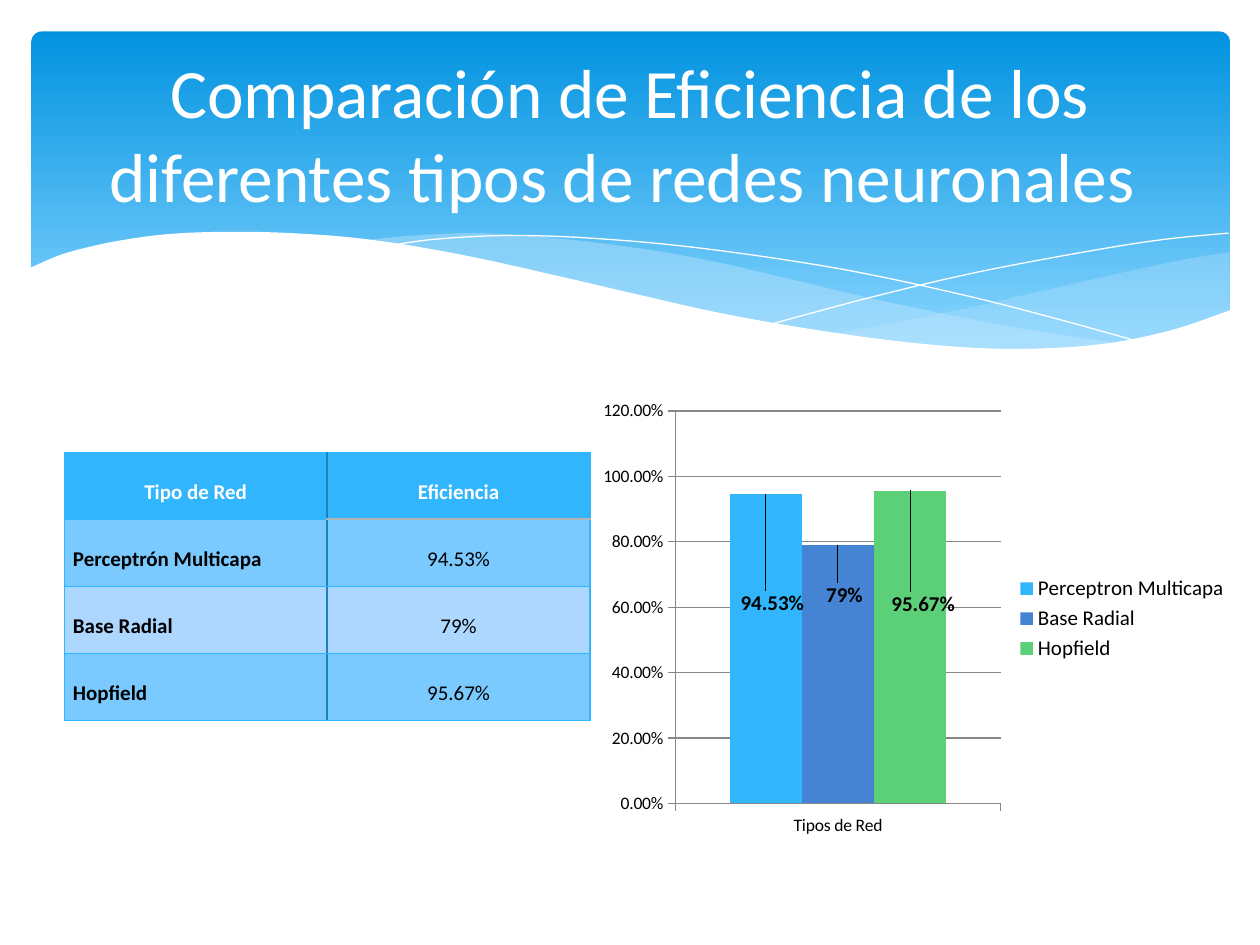
from lxml.etree import SubElement
from pptx import Presentation
from pptx.chart.data import CategoryChartData
from pptx.dml.color import RGBColor
from pptx.enum.chart import XL_CHART_TYPE, XL_LABEL_POSITION, XL_LEGEND_POSITION, XL_TICK_MARK
from pptx.enum.shapes import MSO_SHAPE
from pptx.enum.text import MSO_ANCHOR, MSO_AUTO_SIZE, PP_ALIGN
from pptx.oxml import parse_xml
from pptx.oxml.ns import nsdecls, qn
from pptx.util import Pt

COLORS = {
    "white": "FFFFFF", "black": "000000", "sky": "31B6FD", "blue": "4584D3",
    "green": "5BD078", "banner_top": "0293E0", "banner_bottom": "83D3FE",
    "ribbon": "C6E7FC", "divider": "1C83B9", "rule": "B4B4B4",
    "band_dark": "7BCAFF", "band_light": "ADD7FF", "axis": "878787",
}
FONT = "Calibri"

WAVE = [(703.4, 177.1), (669.6, 188.6), (630, 196.6), (582.5, 199.4), (535.7, 197.3),
        (481, 190.8), (416.9, 180), (362.2, 167.8), (321.8, 158.4), (262.8, 145.4),
        (210.2, 136.8), (165.6, 133.2), (127.4, 132.5), (95, 133.9), (68.4, 137.5),
        (48.2, 141.8), (33.1, 146.2), (16.6, 153.4)]
WAVE_BASE = [(16.6, 236.9), (703.4, 236.9)]
RIGHT_TOP = [(702.7, 144), (673.2, 149), (619.9, 160.6), (560.9, 174.2), (508.3, 185),
             (475.9, 190.8)]
RIGHT_BOTTOM = [(475.9, 190.8), (507.6, 195.1), (545, 198), (578.2, 200.2), (614.9, 198.7),
                (645.8, 194.4), (673.2, 188.6), (702.7, 177.8)]
LEFT_TOP = [(643, 196.6), (581, 187.2), (508.3, 172.8), (452.9, 159.8), (409.7, 149.8),
            (370.1, 142.6), (318.2, 136.1), (273.6, 133.2), (236.2, 134.6), (205.9, 137.5)]
LEFT_BOTTOM = [(205.9, 137.5), (246.2, 143.3), (290.9, 151.9), (353.5, 167), (407.5, 178.6),
               (468, 190.1), (519.8, 197.3), (565.2, 200.2), (603.4, 200.2), (643, 196.6)]
FALLING_LINE = [(222.5, 140.4), (247.7, 136.8), (288.7, 134.6), (337.7, 136.1),
                (400.3, 141.8), (478.8, 153.4), (547.2, 167.8), (598.3, 180.7), (653, 195.8)]
RISING_LINE = [(441.4, 185), (500.4, 169.2), (558.7, 155.5), (623.5, 143.3),
               (665.3, 136.8), (702, 133.2)]

TABLE_ROWS = [("Tipo de Red", "Eficiencia"), ("Perceptrón Multicapa", "94.53%"),
              ("Base Radial", "79%"), ("Hopfield", "95.67%")]
SERIES = [("Perceptron Multicapa", 0.9453, "sky", "0.00%", 0.01, 0.28),
          ("Base Radial", 0.79, "blue", "0%", 0.01, 0.15),
          ("Hopfield", 0.9567, "green", "0.00%", 0.02, 0.29)]


def rgb(name):
    return RGBColor.from_string(COLORS[name])


def smooth_curve(points, steps=6):
    if len(points) < 3:
        return points
    padded = [points[0], *points, points[-1]]
    curve = [points[0]]
    for before, start, end, after in zip(padded, padded[1:], padded[2:], padded[3:]):
        for step in range(1, steps + 1):
            t = step / steps
            curve.append(tuple(
                0.5 * (2 * b + (c - a) * t + (2 * a - 5 * b + 4 * c - d) * t ** 2
                       + (3 * b - a - 3 * c + d) * t ** 3)
                for a, b, c, d in zip(before, start, end, after)))
    return curve


def plot_layout(mode, **places):
    targets = '<c:layoutTarget val="inner"/>' if mode == "edge" else ""
    modes = '<c:xMode val="edge"/><c:yMode val="edge"/>' if mode == "edge" else ""
    values = "".join(f'<c:{key} val="{value}"/>' for key, value in places.items())
    return parse_xml(f'<c:layout {nsdecls("c")}><c:manualLayout>{targets}{modes}{values}'
                     '</c:manualLayout></c:layout>')


class SlideBuilder:
    def __init__(self, presentation):
        self.slide = presentation.slides.add_slide(presentation.slide_layouts[5])
        self.shapes = self.slide.shapes

    def style_font(self, font, size, color="black", bold=False):
        font.name, font.size, font.bold = FONT, Pt(size), bold
        font.color.rgb = rgb(color)

    def banner(self, left, top, width, height):
        shape = self.shapes.add_shape(MSO_SHAPE.ROUNDED_RECTANGLE,
                                      Pt(left), Pt(top), Pt(width), Pt(height))
        shape.adjustments[0] = 0.03
        shape.shadow.inherit = False
        shape.line.fill.background()
        shape.fill.gradient()
        shape.fill.gradient_angle = 270
        for stop, position, color in zip(shape.fill.gradient_stops, (0, 0.9),
                                         ("banner_top", "banner_bottom")):
            stop.position = position
            stop.color.rgb = rgb(color)

    def curve(self, *edges, fill=None, opacity=100):
        points = [(Pt(x), Pt(y)) for edge in edges for x, y in smooth_curve(edge)]
        builder = self.shapes.build_freeform(*points[0])
        builder.add_line_segments(points[1:], close=fill is not None)
        shape = builder.convert_to_shape()
        shape.shadow.inherit = False
        if fill is None:
            shape.fill.background()
            shape.line.color.rgb = rgb("white")
            shape.line.width = Pt(0)
            return
        shape.line.fill.background()
        shape.fill.solid()
        shape.fill.fore_color.rgb = rgb(fill)
        if opacity < 100:
            color = shape._element.spPr.find(".//" + qn("a:srgbClr"))
            SubElement(color, qn("a:alpha"), val=str(opacity * 1000))

    def title(self, text, left, top, width, height):
        shape = self.shapes.title
        shape.left, shape.top, shape.width, shape.height = map(Pt, (left, top, width, height))
        frame = shape.text_frame
        frame.text = text
        frame.word_wrap = True
        frame.auto_size = MSO_AUTO_SIZE.NONE
        frame.vertical_anchor = MSO_ANCHOR.MIDDLE
        frame.paragraphs[0].alignment = PP_ALIGN.CENTER
        self.style_font(frame.paragraphs[0].font, 39.6, "white")
        self.shapes._spTree.append(shape._element)

    def border(self, cell, side, color, width):
        cell._tc.get_or_add_tcPr().append(parse_xml(
            f'<a:ln{side} {nsdecls("a")} w="{Pt(width)}"><a:solidFill>'
            f'<a:srgbClr val="{COLORS[color]}"/></a:solidFill></a:ln{side}>'))

    def table(self, rows, left, top, width, height):
        table = self.shapes.add_table(len(rows), len(rows[0]), Pt(left), Pt(top),
                                      Pt(width), Pt(height)).table
        for row, texts in enumerate(rows):
            for column, text in enumerate(texts):
                cell = table.cell(row, column)
                borders = {side: ("sky", 0.75) for side in "LRTB"}
                borders["R" if column == 0 else "L"] = ("divider", 1.25)
                if column == 1 and row < 2:
                    borders["B" if row == 0 else "T"] = ("rule", 1.25)
                for side, (color, line_width) in borders.items():
                    self.border(cell, side, color, line_width)
                cell.fill.solid()
                band = "band_dark" if row % 2 else "band_light"
                cell.fill.fore_color.rgb = rgb("sky" if row == 0 else band)
                cell.margin_left = cell.margin_right = Pt(5)
                cell.margin_top = cell.margin_bottom = 0
                cell.vertical_anchor = MSO_ANCHOR.MIDDLE
                cell.text = text
                paragraph = cell.text_frame.paragraphs[0]
                paragraph.alignment = (PP_ALIGN.JUSTIFY if row and column == 0
                                       else PP_ALIGN.CENTER)
                paragraph.line_spacing = 1.5
                paragraph.space_after = Pt(2)
                self.style_font(paragraph.font, 12, "black" if row else "white",
                                row == 0 or column == 0)

    def chart(self, category, series_list, left, top, width, height):
        data = CategoryChartData(number_format="0.00%")
        data.categories = [category]
        for name, value, *_ in series_list:
            data.add_series(name, [value])
        chart = self.shapes.add_chart(XL_CHART_TYPE.COLUMN_CLUSTERED, Pt(left), Pt(top),
                                      Pt(width), Pt(height), data).chart
        chart.has_title = False
        self.style_font(chart.font, 10)
        chart.has_legend = True
        chart.legend.position = XL_LEGEND_POSITION.RIGHT
        chart.legend.include_in_layout = False
        self.style_font(chart.legend.font, 12)
        value_axis = chart.value_axis
        value_axis.minimum_scale, value_axis.maximum_scale = 0, 1.2
        value_axis.major_unit = 0.2
        value_axis.tick_labels.number_format = "0.00%"
        value_axis.tick_labels.number_format_is_linked = False
        for axis in (value_axis, chart.category_axis):
            axis.major_tick_mark = XL_TICK_MARK.OUTSIDE
            axis.format.line.color.rgb = rgb("axis")
        value_axis.major_gridlines.format.line.color.rgb = rgb("axis")
        plot = chart.plots[0]
        plot.gap_width, plot.overlap = 150, 0
        plot.vary_by_categories = False
        plot_area = chart._chartSpace.find(".//" + qn("c:plotArea"))
        for layout in plot_area.findall(qn("c:layout")):
            plot_area.remove(layout)
        plot_area.insert(0, plot_layout("edge", x=0.13, y=0.04, w=0.5, h=0.87))
        for series, (_, _, color, number_format, x, y) in zip(plot.series, series_list):
            series.format.fill.solid()
            series.format.fill.fore_color.rgb = rgb(color)
            label = series.points[0].data_label
            self.style_font(label.font, 12, bold=True)
            label.position = XL_LABEL_POSITION.OUTSIDE_END
            element = series._element.find(".//" + qn("c:dLbl"))
            element.insert(1, plot_layout("offset", x=x, y=y))
            element.insert(2, parse_xml(f'<c:numFmt {nsdecls("c")} sourceLinked="0" '
                                        f'formatCode="{number_format}"/>'))


def main():
    presentation = Presentation()
    presentation.slide_width, presentation.slide_height = Pt(720), Pt(540)
    builder = SlideBuilder(presentation)
    builder.banner(18, 18, 684.7, 194.4)
    builder.curve(RIGHT_TOP, RIGHT_BOTTOM, fill="ribbon", opacity=29)
    builder.curve(LEFT_TOP, LEFT_BOTTOM, fill="ribbon", opacity=40)
    builder.curve(FALLING_LINE)
    builder.curve(RISING_LINE)
    builder.curve(WAVE, WAVE_BASE, fill="white")
    builder.title("Comparación de Eficiencia de los diferentes tipos de redes neuronales ",
                  36, 26.6, 648, 98.6)
    builder.chart("Tipos de Red", SERIES, 337.7, 224.6, 371.5, 257.8)
    builder.table(TABLE_ROWS, 36.7, 258.5, 300.5, 153.4)
    presentation.save("out.pptx")


if __name__ == "__main__":
    main()
